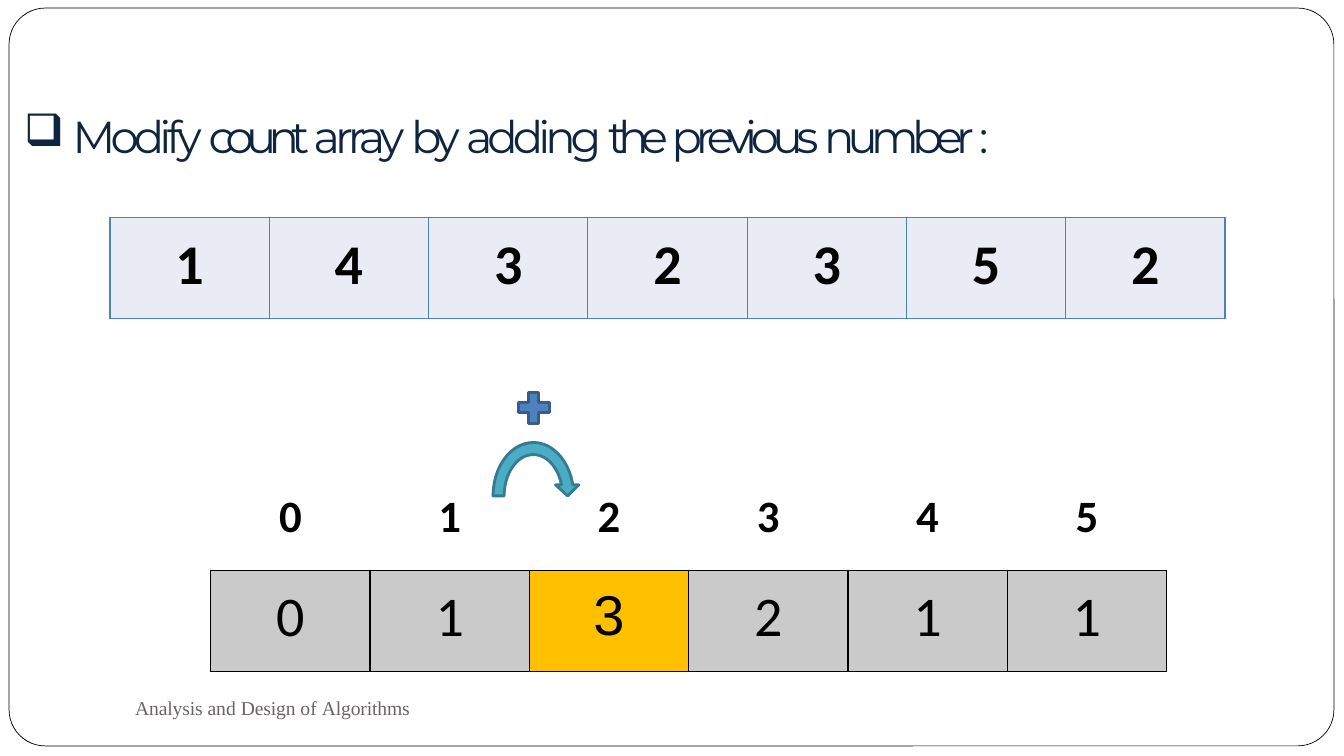
import math
from dataclasses import dataclass

import pptx
import pptx.dml.color
import pptx.enum.shapes
import pptx.enum.text
import pptx.oxml
import pptx.oxml.ns
import pptx.util
from pptx.util import Inches

# Each word comes with its letter spacing in points.
HEADING = [("Modify ", -3.5), ("count ", -5.5), ("array ", -3.5), ("by ", -3.9), ("adding ", -3.6),
           ("the ", -5.7), ("previous ", -4.5), ("number ", -4.8), (":", -1.4)]
FOOTER = [("Analysis ", -0.1), ("and ", 0), ("Design ", -0.1), ("of ", 0), ("Algorithms", -0.1)]
INPUT_ARRAY = [1, 4, 3, 2, 3, 5, 2]
COUNT_ARRAY = [0, 1, 3, 2, 1, 1]
CHANGED_INDEX = 2


@dataclass(frozen=True)
class Theme:
    heading_font: str = "Montserrat"
    number_font: str = "Calibri"
    changed_font: str = "Arial"
    footer_font: str = "Times New Roman"
    heading_size: float = 32
    colon_size: float = 31
    value_size: float = 40
    index_size: float = 32
    footer_size: float = 14
    white: str = "FFFFFF"
    black: str = "000000"
    heading: str = "0F243E"
    footer: str = "696464"
    input_fill: str = "E9ECF4"
    count_fill: str = "CACACA"
    changed_fill: str = "FFC000"
    blue: str = "4F81BC"
    plus_line: str = "385D89"
    arrow_fill: str = "4AACC5"
    arrow_line: str = "357C91"


THEME = Theme()
CELL_WIDTH, VALUE_HEIGHT, INDEX_HEIGHT = 1.58, 1, 0.68
NO_STYLE = "{2D5ABB26-0587-4C30-8999-92F81FD0307C}"


def rgb(color):
    return pptx.dml.color.RGBColor.from_string(color)


def set_font(font, name, size, color, bold=False):
    font.name, font.size, font.bold = name, pptx.util.Pt(size), bold
    font.color.rgb = rgb(color)


def paint(shape, fill, line, width):
    shape.shadow.inherit = False
    shape.fill.solid()
    shape.fill.fore_color.rgb = rgb(fill)
    shape.line.color.rgb = rgb(line)
    shape.line.width = pptx.util.Pt(width)


def child(parent, tag, **attributes):
    element = pptx.oxml.ns.qn(tag)
    node = parent.makeelement(element, attributes)
    parent.append(node)
    return node


def place(shape, left, top, width, height):
    shape.left, shape.top = Inches(left), Inches(top)
    shape.width, shape.height = Inches(width), Inches(height)


def prepare_frame(shape, anchor, top=0):
    frame = shape.text_frame
    frame.word_wrap = True
    frame.auto_size = pptx.enum.text.MSO_AUTO_SIZE.SHAPE_TO_FIT_TEXT
    frame.vertical_anchor = anchor
    frame.margin_left = frame.margin_right = frame.margin_bottom = 0
    frame.margin_top = Inches(top)
    paragraph = frame.paragraphs[0]
    paragraph.alignment = pptx.enum.text.PP_ALIGN.LEFT
    return paragraph


def add_spaced_words(paragraph, words):
    for word, spacing in words:
        run = paragraph.add_run()
        run.text = word
        run._r.get_or_add_rPr().set("spc", str(round(spacing * 100)))


def add_heading(slide):
    title = slide.shapes.title
    place(title, 0.23, 1.07, 10.34, 0.56)
    paragraph = prepare_frame(title, pptx.enum.text.MSO_ANCHOR.TOP, 0.01)
    paragraph.space_before = pptx.util.Pt(1.1)
    properties = paragraph._p.get_or_add_pPr()
    properties.set("marL", str(Inches(0.49)))
    properties.set("indent", str(Inches(-0.48)))
    child(properties, "a:buChar", char="❑")
    set_font(paragraph.font, THEME.heading_font, THEME.heading_size, THEME.heading)
    add_spaced_words(paragraph, HEADING)
    paragraph.runs[-1].font.size = pptx.util.Pt(THEME.colon_size)


def add_frame(slide):
    frame = slide.shapes.add_shape(pptx.enum.shapes.MSO_SHAPE.ROUNDED_RECTANGLE,
                                   Inches(0.09), Inches(0.08), Inches(13.14), Inches(7.32))
    frame.adjustments[0] = 0.049
    paint(frame, THEME.white, THEME.black, 0.5)
    slide.shapes.title._element.addprevious(frame._element)


def add_grid(slide, left, top, columns, row_heights):
    table = slide.shapes.add_table(len(row_heights), columns, Inches(left), Inches(top),
                                   Inches(CELL_WIDTH * columns), Inches(sum(row_heights))).table
    table.first_row = table.horz_banding = False
    table._tbl.tblPr.find(pptx.oxml.ns.qn("a:tableStyleId")).text = NO_STYLE
    for column in table.columns:
        column.width = Inches(CELL_WIDTH)
    for row, height in zip(table.rows, row_heights):
        row.height = Inches(height)
    return table


def write_cell(cell, value, font, size, bold, top=0.0):
    cell.margin_left = cell.margin_right = cell.margin_bottom = 0
    cell.margin_top = Inches(top)
    cell.text = str(value)
    paragraph = cell.text_frame.paragraphs[0]
    paragraph.alignment = pptx.enum.text.PP_ALIGN.CENTER
    set_font(paragraph.font, font, size, THEME.black, bold)
    return paragraph


def write_value(cell, value, fill, line, font=THEME.number_font, bold=False, top=0.13, before=9.5):
    write_cell(cell, value, font, THEME.value_size, bold, top).space_before = pptx.util.Pt(before)
    properties = cell._tc.get_or_add_tcPr()
    for side in ("a:lnL", "a:lnR", "a:lnT", "a:lnB"):
        border = child(properties, side, w=str(pptx.util.Pt(1)))
        child(child(border, "a:solidFill"), "a:srgbClr", val=line)
    cell.fill.solid()
    cell.fill.fore_color.rgb = rgb(fill)


def add_input_array(slide):
    table = add_grid(slide, 1.09, 2.16, len(INPUT_ARRAY), [VALUE_HEIGHT])
    for column, value in enumerate(INPUT_ARRAY):
        write_value(table.cell(0, column), value, THEME.input_fill, THEME.blue, bold=True, before=9.4)


def add_count_array(slide):
    table = add_grid(slide, 2.09, 4.98, len(COUNT_ARRAY), [INDEX_HEIGHT, VALUE_HEIGHT])
    for index, value in enumerate(COUNT_ARRAY):
        label = write_cell(table.cell(0, index), index, THEME.number_font, THEME.index_size, True)
        label.line_spacing = pptx.util.Pt(30.4)
        cell = table.cell(1, index)
        if index == CHANGED_INDEX:
            write_value(cell, value, THEME.changed_fill, THEME.black, THEME.changed_font, top=0.14, before=9.9)
        else:
            write_value(cell, value, THEME.count_fill, THEME.black)


def add_curved_arrow(slide):
    """Draw a band between two half ellipses that ends in an arrowhead."""
    center, base, neck, steps = 5.29, 4.92, 4.81, 24

    def arc(radius_x, radius_y):
        end = math.asin((base - neck) / radius_y)
        angles = [math.pi + (end - math.pi) * step / steps for step in range(steps + 1)]
        return [(center + radius_x * math.cos(a), base - radius_y * math.sin(a)) for a in angles]

    head = [(5.74, neck), (5.63, base), (5.51, neck)]
    points = arc(0.4, 0.53) + head + arc(0.29, 0.41)[::-1]
    outline = [(Inches(x), Inches(y)) for x, y in points]
    builder = slide.shapes.build_freeform(*outline[0])
    builder.add_line_segments(outline[1:], close=True)
    paint(builder.convert_to_shape(), THEME.arrow_fill, THEME.arrow_line, 2.04)


def add_plus(slide):
    plus = slide.shapes.add_shape(pptx.enum.shapes.MSO_SHAPE.CROSS,
                                  Inches(5.14), Inches(3.89), Inches(0.31), Inches(0.31))
    plus.adjustments[0] = 0.34
    paint(plus, THEME.blue, THEME.plus_line, 2.04)


def add_footer(slide):
    box = slide.shapes.add_textbox(Inches(1.33), Inches(6.75), Inches(5.78), Inches(0.5))
    paragraph = prepare_frame(box, pptx.enum.text.MSO_ANCHOR.MIDDLE)
    paragraph.line_spacing = pptx.util.Pt(20.1)
    paragraph._p.get_or_add_pPr().set("marL", str(Inches(0.01)))
    set_font(paragraph.font, THEME.footer_font, THEME.footer_size, THEME.footer)
    add_spaced_words(paragraph, FOOTER)


def main():
    presentation = pptx.Presentation()
    presentation.slide_width, presentation.slide_height = Inches(13.33), Inches(7.5)
    slide = presentation.slides.add_slide(presentation.slide_layouts.get_by_name("Title Only"))
    for add_part in (add_frame, add_heading, add_input_array, add_count_array,
                     add_curved_arrow, add_plus, add_footer):
        add_part(slide)
    presentation.save("out.pptx")


if __name__ == "__main__":
    main()
